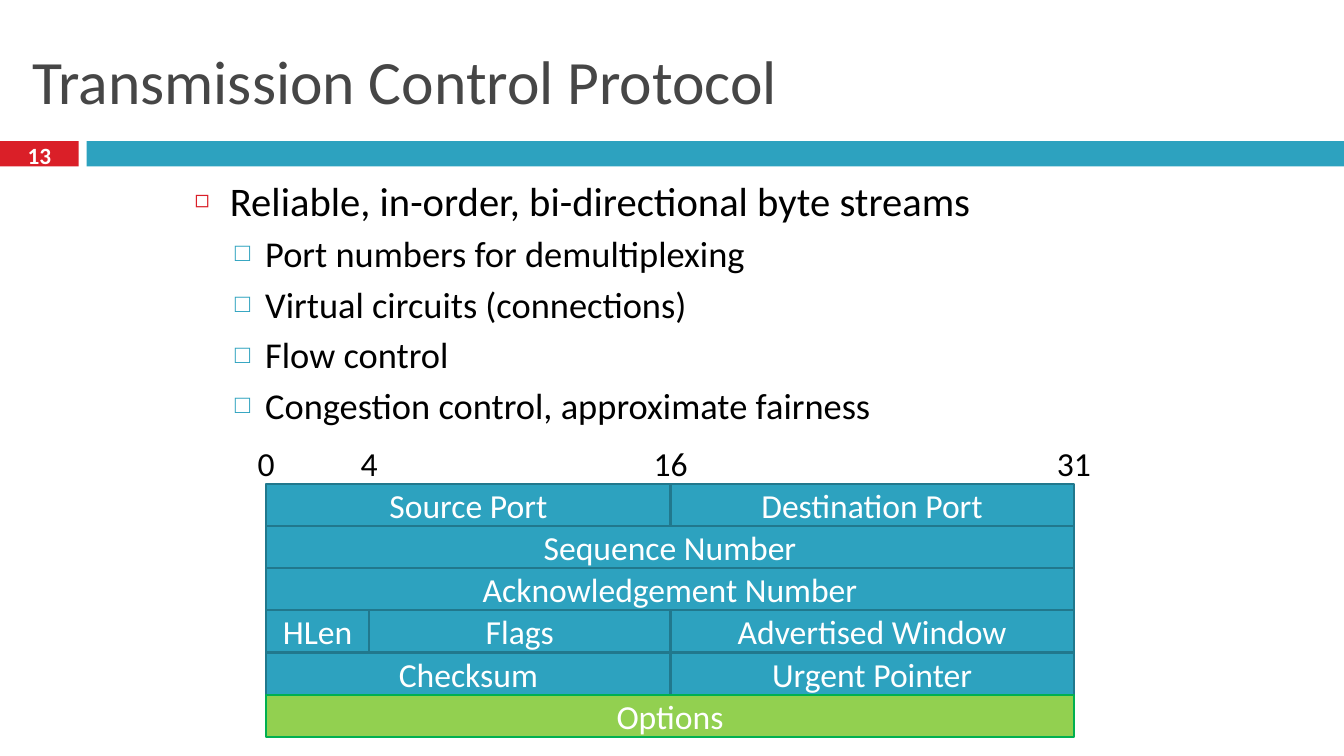
from dataclasses import dataclass

from lxml import etree
from pptx import Presentation
from pptx import util as u
from pptx.dml.color import RGBColor
from pptx.enum import shapes, text
from pptx.oxml import ns


@dataclass(frozen=True)
class Theme:
    font: str = "Calibri"
    red: str = "DA1F28"
    teal: str = "2DA2BF"
    teal_edge: str = "21788D"
    green: str = "92D050"
    green_edge: str = "00B050"
    gray: str = "464646"
    black: str = "000000"
    white: str = "FFFFFF"
    title_size: float = 44
    body_size: float = 29
    sub_size: float = 26
    label_size: float = 24
    number_size: float = 16.6


THEME = Theme()

BULLETS = [
    (0, "Reliable, in-order, bi-directional byte streams"),
    (1, "Port numbers for demultiplexing"),
    (1, "Virtual circuits (connections)"),
    (1, "Flow control"),
    (1, "Congestion control, approximate fairness"),
]

BIT_EDGES = {0: 0, 4: 1.02, 16: 4.01, 31: 8.01}

HEADER_ROWS = [
    [("Source Port", 0, 16), ("Destination Port", 16, 31)],
    [("Sequence Number", 0, 31)],
    [("Acknowledgement Number", 0, 31)],
    [("HLen", 0, 4), ("Flags", 4, 16), ("Advertised Window", 16, 31)],
    [("Checksum", 0, 16), ("Urgent Pointer", 16, 31)],
    [("Options", 0, 31)],
]


def inches(box):
    return [u.Inches(length) for length in box]


def place(shape, box):
    shape.left, shape.top, shape.width, shape.height = inches(box)


def style(para, size, color, bold=False):
    para.font.name = THEME.font
    para.font.size = u.Pt(size)
    para.font.bold = bold
    para.font.color.rgb = RGBColor.from_string(color)


def write(shape, words, size, color, align=text.PP_ALIGN.CENTER, bold=False):
    frame = shape.text_frame
    frame.word_wrap = True
    frame.auto_size = text.MSO_AUTO_SIZE.NONE
    frame.vertical_anchor = text.MSO_ANCHOR.MIDDLE
    para = frame.paragraphs[0]
    para.text = words
    para.alignment = align
    style(para, size, color, bold)


def add_rectangle(page, box, fill, edge=None):
    rectangle = page.shapes.add_shape(shapes.MSO_SHAPE.RECTANGLE, *inches(box))
    rectangle.shadow.inherit = False
    rectangle.fill.solid()
    rectangle.fill.fore_color.rgb = RGBColor.from_string(fill)
    if edge:
        rectangle.line.color.rgb = RGBColor.from_string(edge)
        rectangle.line.width = u.Pt(1.5)
    else:
        rectangle.line.fill.background()
    return rectangle


def add_bullet(para, symbol, color, percent, indent, hanging):
    props = para._p.get_or_add_pPr()
    props.set("marL", str(u.Inches(indent)))
    props.set("indent", str(-u.Inches(hanging)))
    tint = etree.SubElement(props, ns.qn("a:buClr"))
    etree.SubElement(tint, ns.qn("a:srgbClr"), val=color)
    etree.SubElement(props, ns.qn("a:buSzPct"), val=str(percent * 1000))
    etree.SubElement(props, ns.qn("a:buChar"), char=symbol)


def add_banner(page, box, number):
    left, top, width, height = box
    number_width, gap = 0.78, 0.08
    bar_left = number_width + gap
    add_rectangle(page, (left, top, number_width, height), THEME.red)
    add_rectangle(page, (left + bar_left, top, width - bar_left, height), THEME.teal)
    label = page.shapes.add_textbox(*inches((left, top - 0.03, number_width, 0.33)))
    write(label, number, THEME.number_size, THEME.white, bold=True)


def add_title(page, box, words):
    title = page.shapes.title
    place(title, box)
    write(title, words, THEME.title_size, THEME.gray, text.PP_ALIGN.LEFT)


def add_body(page, box, bullets):
    body = page.placeholders[1]
    place(body, box)
    frame = body.text_frame
    frame.word_wrap = True
    frame.auto_size = text.MSO_AUTO_SIZE.NONE
    frame.vertical_anchor = text.MSO_ANCHOR.TOP
    for index, (level, words) in enumerate(bullets):
        para = frame.add_paragraph() if index else frame.paragraphs[0]
        para.text = words
        para.level = level
        para.space_before = u.Pt(5 if index else 0)
        if level:
            add_bullet(para, "□", THEME.teal, 70, 0.7, 0.3)
            style(para, THEME.sub_size, THEME.black)
        else:
            add_bullet(para, "◻", THEME.red, 60, 0.35, 0.35)
            style(para, THEME.body_size, THEME.black)


def add_packet_header(page, box, rows):
    left, top, width, height = box
    row_height = height / len(rows)
    label_width, label_height = 0.65, 0.66
    for bit, edge in BIT_EDGES.items():
        label_box = (left + edge - label_width / 2, top - 0.54, label_width, label_height)
        label = page.shapes.add_textbox(*inches(label_box))
        write(label, str(bit), THEME.label_size, THEME.black)
    for index, row in enumerate(rows):
        for name, start, end in row:
            first, last = BIT_EDGES[start], BIT_EDGES[end]
            field_box = (left + first, top + index * row_height, last - first, row_height)
            if name == "Options":
                field = add_rectangle(page, field_box, THEME.green, THEME.green_edge)
            else:
                field = add_rectangle(page, field_box, THEME.teal, THEME.teal_edge)
            write(field, name, THEME.label_size, THEME.white)


def main():
    deck = Presentation()
    deck.slide_width, deck.slide_height = inches((13.33, 7.5))
    page = deck.slides.add_slide(deck.slide_layouts[1])
    add_banner(page, (0, 1.4, 13.33, 0.25), "13")
    add_title(page, (0.22, 0.25, 12.89, 1.08), "Transmission Control Protocol")
    add_body(page, (1.83, 1.69, 9.67, 2.73), BULLETS)
    add_packet_header(page, (2.64, 4.8, 8.01, 2.51), HEADER_ROWS)
    deck.save("out.pptx")


if __name__ == "__main__":
    main()
